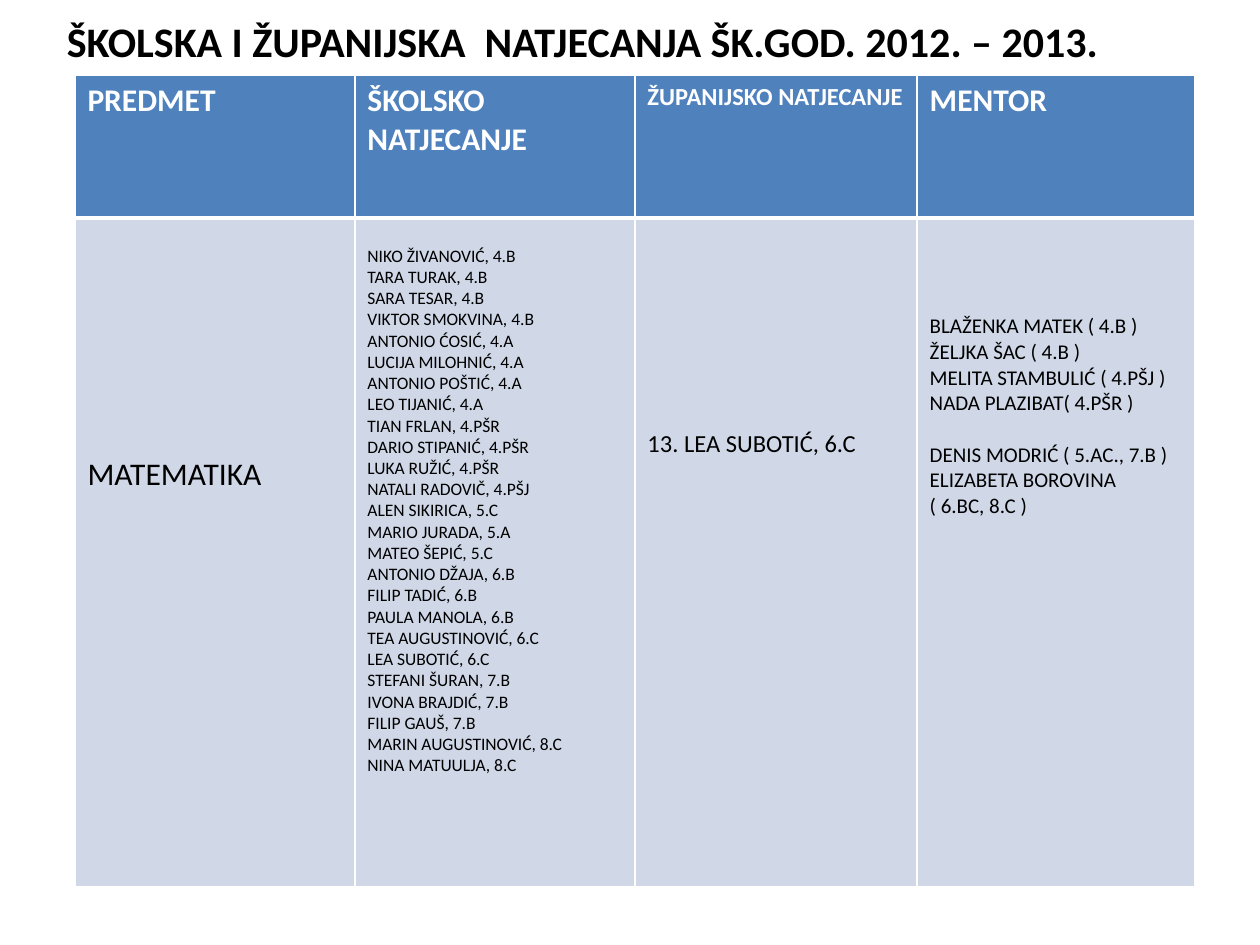
from lxml import etree
from pptx import Presentation
from pptx import util as u
from pptx.dml import color
from pptx.enum import text
from pptx.oxml import ns

FONT = "Calibri"
WHITE, BLACK, BLUE, PALE = "FFFFFF", "000000", "4F81BD", "D0D8E8"
COLUMN_WIDTHS = [160, 160, 161.3, 158.4]
ROW_HEIGHTS = [81.4, 382.3]
TOP_MARGIN = 3.6
HEADINGS = [("PREDMET", 18), ("ŠKOLSKO NATJECANJE", 18),
            ("ŽUPANIJSKO NATJECANJE", 14), ("MENTOR", 18)]
STUDENTS = [
    "NIKO ŽIVANOVIĆ, 4.B", "TARA TURAK, 4.B", "SARA TESAR, 4.B",
    "VIKTOR SMOKVINA, 4.B", "ANTONIO ĆOSIĆ, 4.A", "LUCIJA MILOHNIĆ, 4.A",
    "ANTONIO POŠTIĆ, 4.A", "LEO TIJANIĆ, 4.A", "TIAN FRLAN, 4.PŠR",
    "DARIO STIPANIĆ, 4.PŠR", "LUKA RUŽIĆ, 4.PŠR", "NATALI RADOVIČ, 4.PŠJ",
    "ALEN SIKIRICA, 5.C", "MARIO JURADA, 5.A", "MATEO ŠEPIĆ, 5.C",
    "ANTONIO DŽAJA, 6.B", "FILIP TADIĆ, 6.B", "PAULA MANOLA, 6.B",
    "TEA AUGUSTINOVIĆ, 6.C", "LEA SUBOTIĆ, 6.C", "STEFANI ŠURAN, 7.B",
    "IVONA BRAJDIĆ, 7.B", "FILIP GAUŠ, 7.B", "MARIN AUGUSTINOVIĆ, 8.C",
    "NINA MATUULJA, 8.C",
]
LOWER_GRADE_MENTORS = ["BLAŽENKA MATEK ( 4.B )", "ŽELJKA ŠAC ( 4.B )",
                       "MELITA STAMBULIĆ ( 4.PŠJ )", "NADA PLAZIBAT( 4.PŠR )"]
UPPER_GRADE_MENTORS = ["DENIS MODRIĆ ( 5.AC., 7.B )", "ELIZABETA BOROVINA",
                       "( 6.BC, 8.C )"]
ENTRIES = [(["MATEMATIKA"], 18, 135.5), (STUDENTS, 10, 15.8),
           (["13. LEA SUBOTIĆ, 6.C"], 14, 120.8),
           (LOWER_GRADE_MENTORS + UPPER_GRADE_MENTORS, 12, 54.9)]


def rgb(value):
    """Turn a hex string into a colour."""
    return color.RGBColor.from_string(value)


def apply(target, values):
    """Set every attribute in a dict of format values."""
    for name, value in values.items():
        setattr(target, name, value)


def write_lines(frame, lines, size, ink, bold):
    """Write left-aligned lines as paragraphs of one format."""
    for number, line in enumerate(lines):
        paragraph = frame.add_paragraph() if number else frame.paragraphs[0]
        paragraph.alignment = text.PP_ALIGN.LEFT
        run = paragraph.add_run()
        run.text = line
        apply(run.font, {"name": FONT, "size": u.Pt(size), "bold": bold})
        run.font.color.rgb = rgb(ink)


def add_borders(cell, widths):
    """Draw white cell borders with the given widths by side."""
    properties = cell._tc.get_or_add_tcPr()
    for side in "LRTB":
        border = etree.SubElement(properties, ns.qn(f"a:ln{side}"),
                                  w=str(u.Pt(widths.get(side, 1))))
        fill = etree.SubElement(border, ns.qn("a:solidFill"))
        etree.SubElement(fill, ns.qn("a:srgbClr"), val=WHITE)


def fill_cell(cell, lines, size, ink, bold, fill, top, borders):
    """Give a cell its text, borders, margin and fill."""
    add_borders(cell, borders)
    cell.fill.solid()
    cell.fill.fore_color.rgb = rgb(fill)
    apply(cell, {"margin_top": u.Pt(top),
                 "vertical_anchor": text.MSO_ANCHOR.TOP})
    write_lines(cell.text_frame, lines, size, ink, bold)


def add_title(slide, wording):
    """Place and format the slide title."""
    title = slide.shapes.title
    apply(title, {"left": u.Pt(31), "top": u.Pt(-13.7),
                  "width": u.Pt(669), "height": u.Pt(73.4)})
    apply(title.text_frame, {"word_wrap": True,
                             "auto_size": text.MSO_AUTO_SIZE.NONE,
                             "vertical_anchor": text.MSO_ANCHOR.MIDDLE})
    write_lines(title.text_frame, [wording], 24, BLACK, True)


def add_results(slide):
    """Add the table of competitions, pupils and mentors."""
    results = slide.shapes.add_table(
        len(ROW_HEIGHTS), len(COLUMN_WIDTHS), u.Pt(42.8), u.Pt(43.2),
        u.Pt(sum(COLUMN_WIDTHS)), u.Pt(sum(ROW_HEIGHTS))).table
    for column, width in zip(results.columns, COLUMN_WIDTHS):
        column.width = u.Pt(width)
    for row, height in zip(results.rows, ROW_HEIGHTS):
        row.height = u.Pt(height)
    for index, (heading, size) in enumerate(HEADINGS):
        fill_cell(results.cell(0, index), [heading], size, WHITE, True, BLUE,
                  TOP_MARGIN, {"B": 3})
    for index, (lines, size, top) in enumerate(ENTRIES):
        fill_cell(results.cell(1, index), lines, size, BLACK, False, PALE,
                  top, {"T": 3})
    mentors = results.cell(1, 3).text_frame.paragraphs
    mentors[len(LOWER_GRADE_MENTORS)].space_before = u.Pt(14.65)


def main():
    """Build and save the slide."""
    deck = Presentation()
    apply(deck, {"slide_width": u.Pt(720), "slide_height": u.Pt(540)})
    slide = deck.slides.add_slide(deck.slide_layouts[5])
    add_title(slide, "ŠKOLSKA I ŽUPANIJSKA  NATJECANJA ŠK.GOD. 2012. – 2013.")
    add_results(slide)
    deck.save("out.pptx")


if __name__ == "__main__":
    main()
